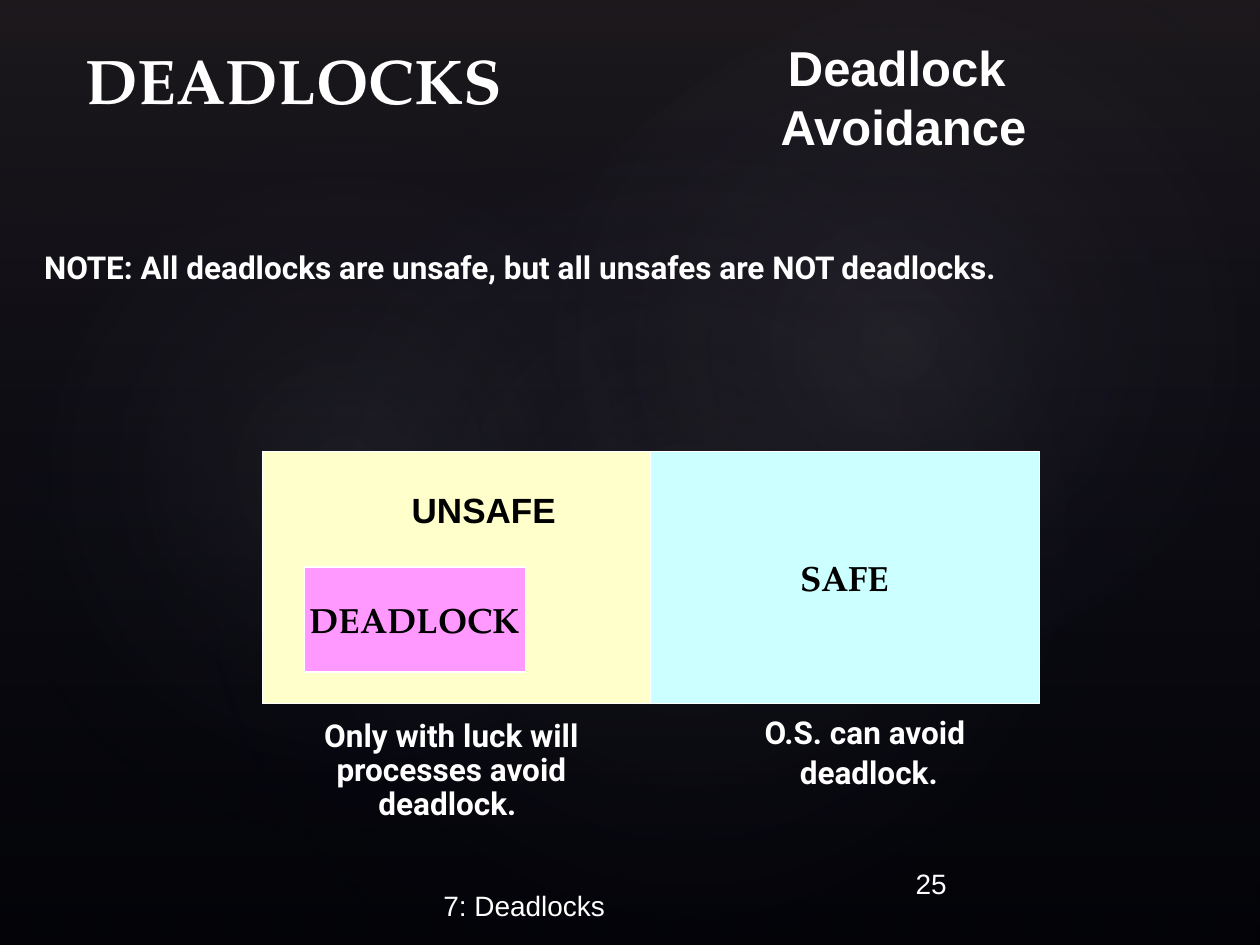
from lxml import etree
from pptx import Presentation
from pptx.dml.color import RGBColor
from pptx.enum.shapes import MSO_SHAPE as Kind
from pptx.enum.text import MSO_ANCHOR as Anchor, PP_ALIGN as Align
from pptx.oxml import parse_xml
from pptx.oxml.ns import nsdecls
from pptx.util import Cm, Pt

WIDE, HIGH = 25.4, 19.05
WHITE, BLACK = "FFFFFF", "000000"
SERIF, SANS, BODY = "TeX Gyre Pagella", "Arial", "Roboto"

LINEAR = '<a:lin ang="5400000" scaled="0"/>'
ROUND = ('<a:path path="circle"><a:fillToRect l="50000" t="50000" '
         'r="50000" b="50000"/></a:path>')
GLOWS = [
    (Kind.RECTANGLE, (0, 0, WIDE, HIGH), 0,
     [(0, "504652", 36), (100, "242852", 10)], LINEAR),
    (Kind.OVAL, (3.81, 2.9, 20.12, 15.85), 328.7,
     [(0, "C4BCC6", 7), (58, "242852", 0)], ROUND),
    (Kind.OVAL, (-0.76, 3.25, 15.39, 12.45), 294.3,
     [(0, "C4BCC6", 8), (58, "242852", 0)], ROUND),
    (Kind.OVAL, (9.09, 0.33, 18.01, 13.21), 328.7,
     [(0, "C4BCC6", 8), (58, "242852", 0)], ROUND),
]

LEFT, TOP, SIDE, TALL = 5.29, 9.1, 7.83, 5.08
BOXES = [
    ((LEFT + SIDE, TOP, SIDE, TALL), "CCFFFF", "SAFE"),
    ((LEFT, TOP, SIDE, TALL), "FFFFCC", ""),
    ((6.14, 11.43, 4.45, 2.12), "FF99FF", "DEADLOCK"),
]

LABEL = dict(name=SERIF, size=Pt(20), bold=True)
FOOT = dict(name=SANS, size=Pt(16), bold=False)
NOTE = dict(name=BODY, size=Pt(18), bold=True)
HEAD = dict(name=SERIF, size=Pt(36), bold=True)
TOPIC = dict(name=SANS, size=Pt(28), bold=True)
STATE = dict(name=SANS, size=Pt(20), bold=True)

MID = dict(alignment=Align.CENTER)
GAP = dict(space_before=Pt(3.6))
TIGHT = dict(MID, **GAP, line_spacing=0.9)
WRAP = dict(word_wrap=True)
FREE = dict(word_wrap=False)
CENTRE = dict(vertical_anchor=Anchor.MIDDLE)
LOW = dict(WRAP, vertical_anchor=Anchor.BOTTOM, margin_bottom=Cm(0.03))

TEXTS = [
    ((8.69, 17.35, 8.05, 1.27), ["7: Deadlocks"], FOOT, WHITE, {}, LOW),
    ((18.21, 17.35, 5.28, 1.27), ["25"], FOOT, WHITE, {}, WRAP),
    ((0.64, 4.88, 23.93, 1.27),
     ["NOTE: All deadlocks are unsafe, but all unsafes are NOT deadlocks."],
     NOTE, WHITE, dict(GAP, alignment=Align.JUSTIFY), WRAP),
    ((8.05, 9.73, 3.43, 1.09), ["UNSAFE"], STATE, BLACK, {}, FREE),
    ((LEFT, 14.4, 7.62, 2.31),
     ["Only with luck will processes avoid deadlock. "],
     NOTE, WHITE, TIGHT, WRAP),
    ((14.99, 14.33, 5.05, 1.78), ["O.S. can avoid ", "deadlock."],
     NOTE, WHITE, TIGHT, FREE),
    ((0.84, 0.64, 10.16, 1.9), ["DEADLOCKS"], HEAD, WHITE, MID,
     dict(WRAP, **CENTRE)),
    ((12.5, 0.64, 11.43, 2.62), ["Deadlock ", "Avoidance"],
     TOPIC, WHITE, MID, WRAP),
]


def paint(fill, tone):
    fill.solid()
    fill.fore_color.rgb = RGBColor.from_string(tone)


def assign(item, form):
    for key, value in form.items():
        setattr(item, key, value)


def write(frame, lines, font, tone, para, body):
    assign(frame, body)
    for i, line in enumerate(lines):
        p = frame.paragraphs[0] if i == 0 else frame.add_paragraph()
        assign(p, para)
        run = p.add_run()
        run.text = line
        assign(run.font, font)
        paint(run.font.fill, tone)


def draw(slide, kind, place):
    shape = slide.shapes.add_shape(kind, *map(Cm, place))
    shape.shadow.inherit = False
    return shape


def glow(slide, kind, place, turn, stops, mode):
    shape = draw(slide, kind, place)
    shape.rotation = turn
    shape.line.fill.background()
    shape.fill.background()
    marks = "".join(
        f'<a:gs pos="{pos * 1000}"><a:srgbClr val="{tone}">'
        f'<a:alpha val="{alpha * 1000}"/></a:srgbClr></a:gs>'
        for pos, tone, alpha in stops)
    grad = parse_xml(f'<a:gradFill {nsdecls("a")} rotWithShape="1">'
                     f'<a:gsLst>{marks}</a:gsLst>{mode}</a:gradFill>')
    props = shape.element.spPr
    old = props.find("{*}noFill")
    props.replace(old, grad)


def main():
    deck = Presentation()
    deck.slide_width, deck.slide_height = Cm(WIDE), Cm(HIGH)
    slide = deck.slides.add_slide(deck.slide_layouts[6])
    paint(slide.background.fill, BLACK)
    for item in GLOWS:
        glow(slide, *item)
    for place, tone, word in BOXES:
        box = draw(slide, Kind.RECTANGLE, place)
        paint(box.fill, tone)
        paint(box.line.fill, WHITE)
        box.line.width = Pt(0.75)
        if word:
            write(box.text_frame, [word], LABEL, BLACK, MID,
                  dict(FREE, **CENTRE))
    for place, *rest in TEXTS:
        write(slide.shapes.add_textbox(*map(Cm, place)).text_frame, *rest)
    deck.save("out.pptx")


if __name__ == "__main__":
    main()
